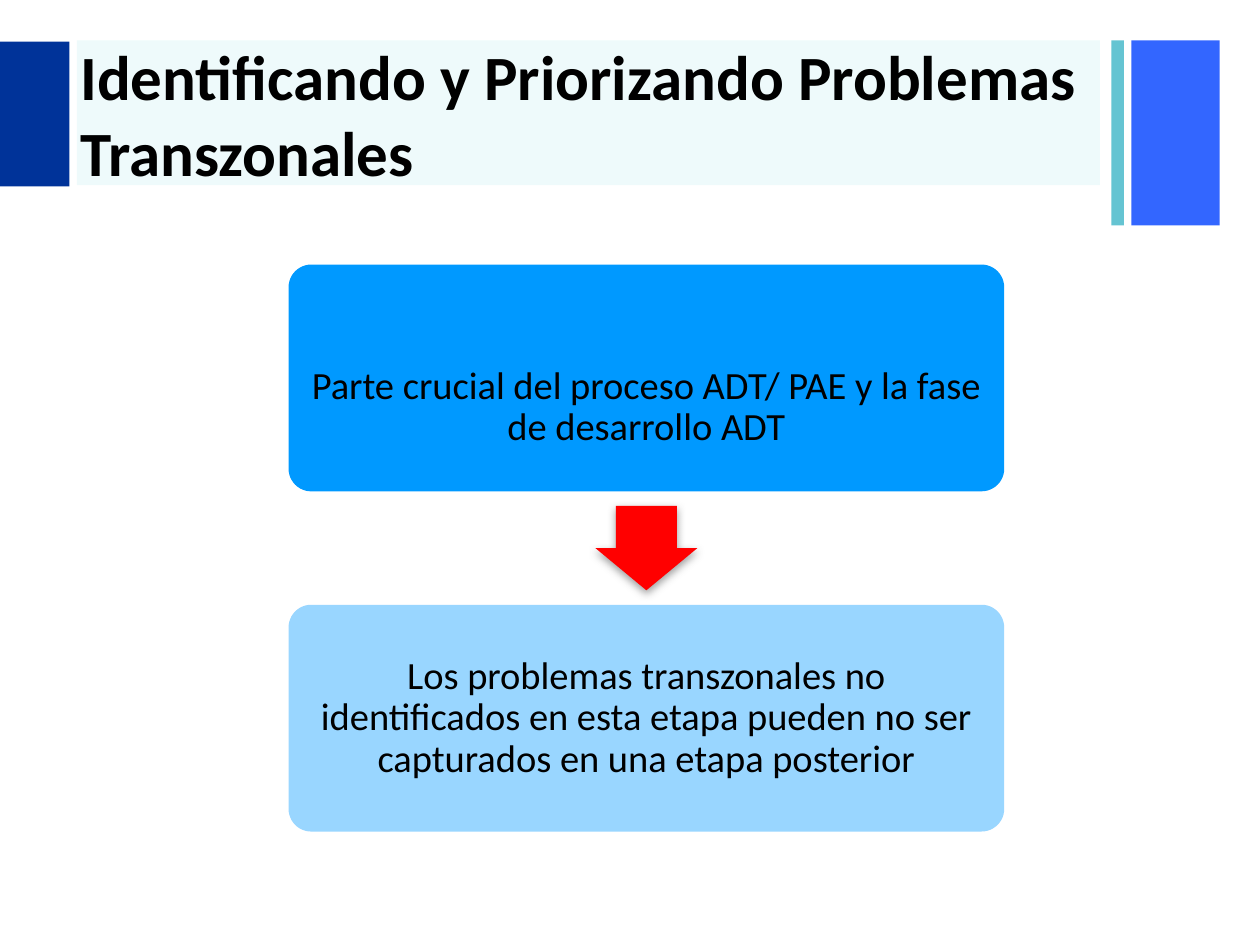
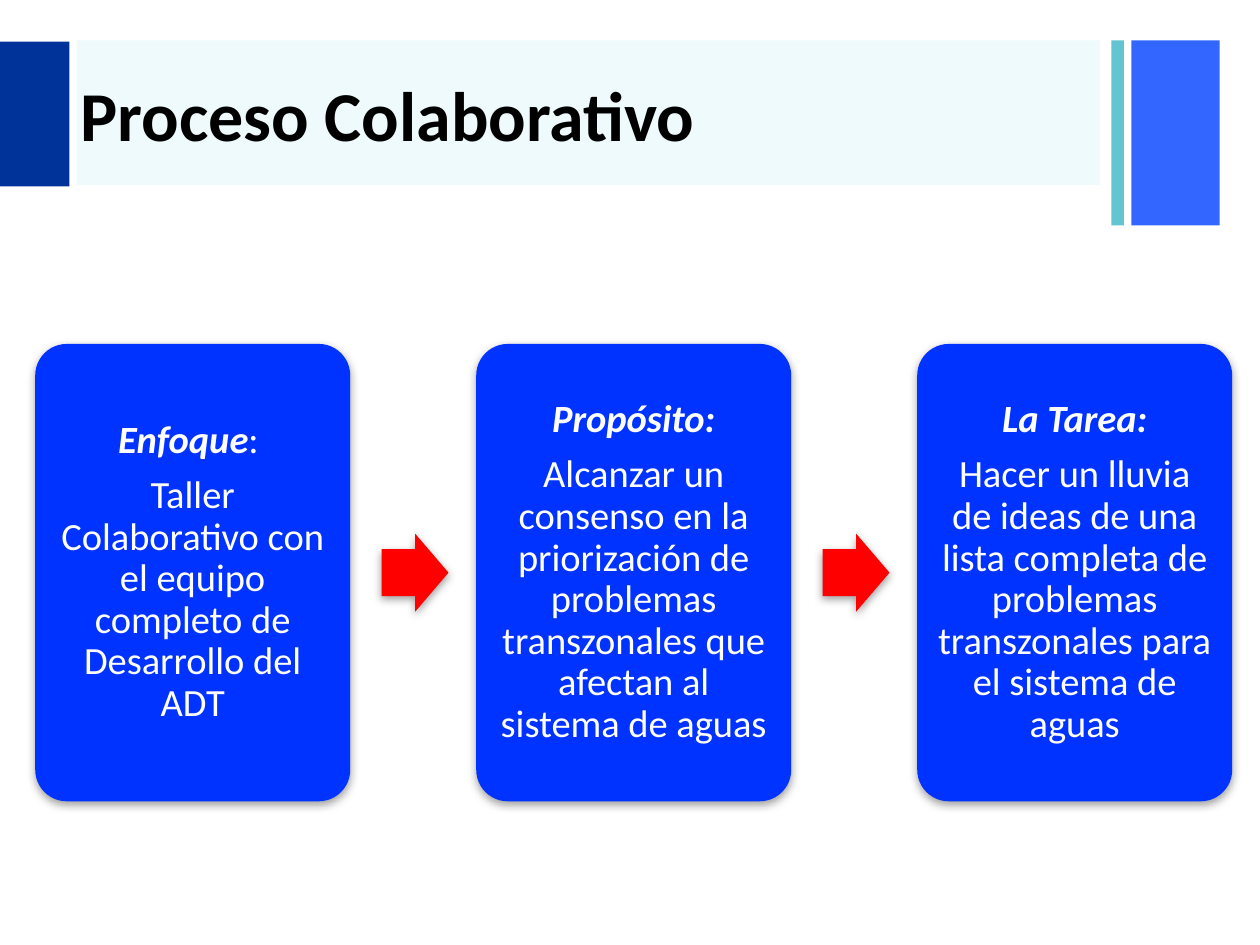
from lxml import etree
from pptx import Presentation
from pptx.dml.color import RGBColor
from pptx.enum.shapes import MSO_SHAPE
from pptx.enum.text import MSO_ANCHOR, PP_ALIGN
from pptx.oxml.ns import qn
from pptx.util import Emu, Pt

PX = 9144  # 100 px to the inch
FONT = "Calibri"
COLORS = {
    "navy": "003399", "royal": "3366FF", "teal": "65C4D2", "tint": "14C5D0",
    "sky": "0099FF", "pale": "99D6FF", "blue": "0033FF", "red": "FF0000",
    "black": "000000", "white": "FFFFFF", "shadow": "808080",
}

# colour, opacity in percent, box
BANDS = [
    ("royal", 100, (898, 32, 70, 147)),
    ("teal", 100, (882, 32, 10, 147)),
    ("tint", 7, (61, 32, 812, 115)),
    ("navy", 100, (0, 33, 55, 115)),
]
TITLE_BOX = (54, 34, 827, 112)

PROBLEMS_TITLE = ("Identificando y Priorizando Problemas Transzonales", 36)
# text, colour, extra room above the text
PROBLEMS = [
    ("Parte crucial del proceso ADT/ PAE y la fase de desarrollo ADT", "sky", 47),
    ("Los problemas transzonales no identificados en esta etapa pueden no ser "
     "capturados en una etapa posterior", "pale", 0),
]

PROCESS_TITLE = ("Proceso Colaborativo", 40)
# heading, plain ending of the heading, body
STEPS = [
    ("Enfoque", ": ",
     "Taller Colaborativo con el equipo completo de Desarrollo del ADT"),
    ("Propósito:", "",
     "Alcanzar un consenso en la priorización de problemas transzonales que "
     "afectan al sistema de aguas"),
    ("La Tarea:", "",
     "Hacer un lluvia de ideas de una lista completa de problemas transzonales "
     "para el sistema de aguas"),
]

PLAIN = {"bold": False, "italic": False}
HEADING = {"bold": True, "italic": True}


def set_all(target, values):
    for name, value in values.items():
        setattr(target, name, value)


def emu(box):
    return [Emu(round(v * PX)) for v in box]


def rgb(name):
    return RGBColor.from_string(COLORS[name])


def add_alpha(color_element, percent):
    etree.SubElement(color_element, qn("a:alpha"), val=str(percent * 1000))


def add_shadow(sp):
    """Cast a soft grey shadow straight down."""
    effects = sp._element.spPr.find(qn("a:effectLst"))
    shadow = etree.SubElement(effects, qn("a:outerShdw"), blurRad=str(Pt(5)),
                              dist=str(Pt(2)), dir="5400000", rotWithShape="0")
    color = etree.SubElement(shadow, qn("a:srgbClr"), val=COLORS["shadow"])
    add_alpha(color, 75)


def add_block(s, kind, box, color, adjustments=(), shadow=False, opacity=100):
    sp = s.shapes.add_shape(kind, *emu(box))
    sp.shadow.inherit = False
    sp.fill.solid()
    sp.fill.fore_color.rgb = rgb(color)
    sp.line.fill.background()
    for i, value in enumerate(adjustments):
        sp.adjustments[i] = value
    if opacity < 100:
        add_alpha(sp._element.spPr.find(".//" + qn("a:srgbClr")), opacity)
    if shadow:
        add_shadow(sp)
    return sp


def add_arrow(s, kind, box):
    add_block(s, kind, box, "red", (0.6, 0.5), shadow=True)


def add_run(p, text, size, color, **style):
    r = p.add_run()
    r.text = text
    set_all(r.font, {"name": FONT, "size": Pt(size), **style})
    r.font.color.rgb = rgb(color)


def write_card(sp, paragraphs, color, inset, extra_top=0):
    """Fill a card with paragraphs, each a list of (text, style) runs."""
    tf = sp.text_frame
    margin, margin_top = emu((inset, inset + extra_top))
    set_all(tf, {
        "word_wrap": True, "vertical_anchor": MSO_ANCHOR.MIDDLE,
        "margin_left": margin, "margin_right": margin,
        "margin_bottom": margin, "margin_top": margin_top,
    })
    for i, runs in enumerate(paragraphs):
        p = tf.add_paragraph() if i else tf.paragraphs[0]
        set_all(p, {"alignment": PP_ALIGN.CENTER, "line_spacing": 0.9,
                    "space_after": Pt(7.7)})
        for text, style in runs:
            if text:
                add_run(p, text, 22, color, **style)


def add_slide(prs, title, size):
    s = prs.slides.add_slide(prs.slide_layouts[6])
    for color, opacity, box in BANDS:
        add_block(s, MSO_SHAPE.RECTANGLE, box, color, opacity=opacity)
    tf = s.shapes.add_textbox(*emu(TITLE_BOX)).text_frame
    set_all(tf, {"word_wrap": True, "vertical_anchor": MSO_ANCHOR.MIDDLE})
    add_run(tf.paragraphs[0], title, size, "black", bold=True)
    return s


def build_problems(prs):
    s = add_slide(prs, *PROBLEMS_TITLE)
    left, top, width, height, gap = 229, 210, 568, 180, 90
    arrow_w, arrow_h = 81, 67
    for i, (text, color, extra_top) in enumerate(PROBLEMS):
        y = top + i * (height + gap)
        if i:
            add_arrow(s, MSO_SHAPE.DOWN_ARROW,
                      (left + (width - arrow_w) / 2, y - (gap + arrow_h) / 2,
                       arrow_w, arrow_h))
        card = add_block(s, MSO_SHAPE.ROUNDED_RECTANGLE,
                         (left, y, width, height), color, (0.1,))
        write_card(card, [[(text, PLAIN)]], "black", 9, extra_top)


def build_process(prs):
    s = add_slide(prs, *PROCESS_TITLE)
    left, top, width, height, gap = 28, 273, 250, 363, 100
    arrow_w, arrow_h, arrow_offset = 53, 62, 25
    for i, (heading, ending, body) in enumerate(STEPS):
        x = left + i * (width + gap)
        if i:
            add_arrow(s, MSO_SHAPE.RIGHT_ARROW,
                      (x - gap + arrow_offset, top + (height - arrow_h) / 2,
                       arrow_w, arrow_h))
        card = add_block(s, MSO_SHAPE.ROUNDED_RECTANGLE,
                         (x, top, width, height), "blue", (0.1,), shadow=True)
        write_card(card, [[(heading, HEADING), (ending, PLAIN)],
                          [(body, PLAIN)]], "white", 7)


def main():
    prs = Presentation()
    prs.slide_width, prs.slide_height = emu((1000, 750))
    build_problems(prs)
    build_process(prs)
    prs.save("out.pptx")


if __name__ == "__main__":
    main()
